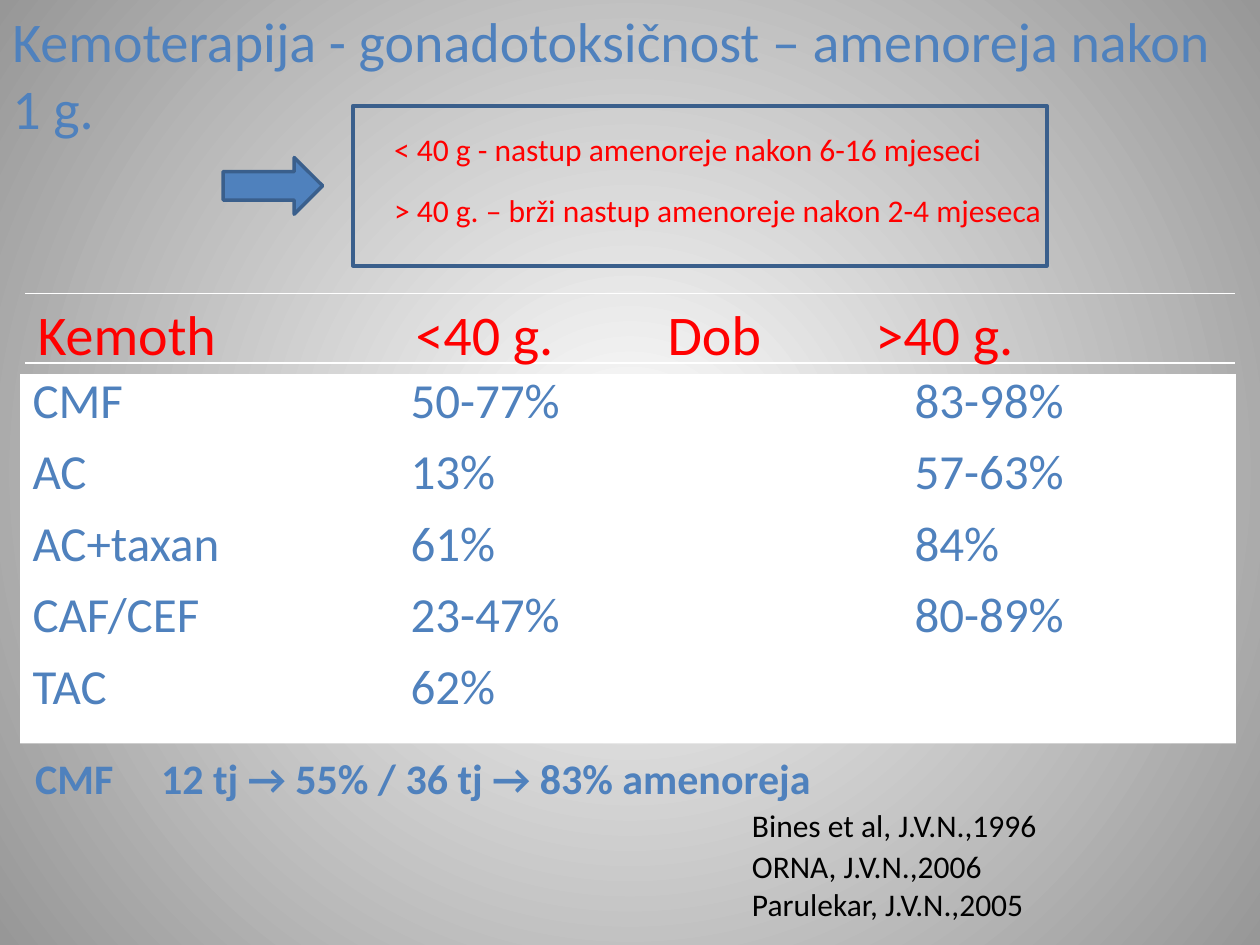
"""Build the slide on amenorrhoea one year after chemotherapy."""
import pptx
import pptx.dml.color
import pptx.enum.shapes
import pptx.enum.text
import pptx.oxml
import pptx.oxml.ns
import pptx.util
from pptx.util import Inches

COLOURS = {
    "blue": "4F81BD",
    "outline": "3A5F8C",
    "red": "FF0000",
    "white": "FFFFFF",
    "grey": "979797",
    "black": "000000",
}


def colour(name):
    return pptx.dml.color.RGBColor.from_string(COLOURS[name])


def write(box, lines, size=18, ink="blue", bold=False, before=0, spacing=None,
          first_spacing=None, tabs=()):
    frame = box.text_frame
    frame.word_wrap = True
    frame.vertical_anchor = pptx.enum.text.MSO_ANCHOR.TOP
    for index, line in enumerate(lines):
        para = frame.paragraphs[0] if index == 0 else frame.add_paragraph()
        para.alignment = pptx.enum.text.PP_ALIGN.LEFT
        para.space_before = pptx.util.Pt(before if index else 0)
        line_spacing = first_spacing if index == 0 and first_spacing else spacing
        if line_spacing:
            para.line_spacing = line_spacing
        if tabs:
            properties = para._p.get_or_add_pPr()
            stops = pptx.oxml.parse_xml(f"<a:tabLst {pptx.oxml.ns.nsdecls('a')}/>")
            for stop in tabs:
                tab = stops.makeelement(pptx.oxml.ns.qn("a:tab"),
                                        {"pos": str(Inches(stop)), "algn": "l"})
                stops.append(tab)
            properties.append(stops)
        span = para.add_run()
        span.text = line
        span.font.name = "Calibri"
        span.font.size = pptx.util.Pt(size)
        span.font.bold = bold
        span.font.color.rgb = colour(ink)


deck = pptx.Presentation()
deck.slide_width, deck.slide_height = Inches(10), Inches(7.5)
page = deck.slides.add_slide(deck.slide_layouts[6])
shapes = page.shapes

background = page.background.fill
background.gradient()
for stop, name, position in zip(background.gradient_stops, ("white", "grey"), (0, 1)):
    stop.color.rgb = colour(name)
    stop.position = position
gradient = page.element.find(".//" + pptx.oxml.ns.qn("a:gradFill"))
gradient.remove(gradient.find(pptx.oxml.ns.qn("a:lin")))
gradient.append(pptx.oxml.parse_xml(
    f'<a:path {pptx.oxml.ns.nsdecls("a")} path="circle">'
    '<a:fillToRect l="50000" t="50000" r="50000" b="50000"/></a:path>'))

panel = shapes.add_shape(pptx.enum.shapes.MSO_SHAPE.RECTANGLE,
                         Inches(0.16), Inches(2.97), Inches(9.65), Inches(2.93))
panel.shadow.inherit = False
panel.fill.solid()
panel.fill.fore_color.rgb = colour("white")
panel.line.fill.background()
therapies = [
    ("CMF", "50-77%", "83-98%"),
    ("AC", "13%", "57-63%"),
    ("AC+taxan", "61%", "84%"),
    ("CAF/CEF", "23-47%", "80-89%"),
    ("TAC", "62%"),
]
write(panel, ["\t".join(row) for row in therapies], size=28, before=14,
      spacing=0.8, tabs=(3, 7))

for height in (2.33, 2.88, 5.88):
    rule = shapes.add_connector(pptx.enum.shapes.MSO_CONNECTOR.STRAIGHT,
                                Inches(0.2), Inches(height), Inches(9.8), Inches(height))
    rule.line.color.rgb = colour("white")
    rule.line.width = pptx.util.Pt(0.75)
    rule._element.spPr.append(
        pptx.oxml.parse_xml(f"<a:effectLst {pptx.oxml.ns.nsdecls('a')}/>"))

texts = [
    ((0, 0, 10, 1.18), ["Kemoterapija - gonadotoksičnost – amenoreja nakon 1 g."],
     {"size": 32}),
    ((0.2, 2.33, 9.57, 0.64), ["Kemoth\t<40 g.\tDob\t>40 g."],
     {"size": 32, "ink": "red", "tabs": (3, 5, 6.65)}),
    ((0.18, 5.92, 10.28, 0.5), ["CMF\t12 tj → 55% / 36 tj → 83% amenoreja"],
     {"size": 24, "bold": True, "tabs": (1,)}),
    ((5.87, 6.35, 4.13, 1.09),
     ["Bines et al, J.V.N.,1996", "ORNA, J.V.N.,2006", "Parulekar, J.V.N.,2005"],
     {"ink": "black", "before": 9, "spacing": 0.6, "first_spacing": 1.0}),
    ((3.03, 0.98, 5.28, 0.4), ["< 40 g - nastup amenoreje nakon 6-16 mjeseci"],
     {"ink": "red"}),
    ((3.03, 1.47, 5.35, 0.71), ["> 40 g. – brži nastup amenoreje nakon 2-4 mjeseca"],
     {"ink": "red"}),
]
for place, lines, style in texts:
    write(shapes.add_textbox(*map(Inches, place)), lines, **style)

outlined = [
    (pptx.enum.shapes.MSO_SHAPE.RECTANGLE, (2.8, 0.84, 5.51, 1.27), None),
    (pptx.enum.shapes.MSO_SHAPE.RIGHT_ARROW, (1.77, 1.25, 0.79, 0.45), "blue"),
]
for kind, place, fill in outlined:
    shape = shapes.add_shape(kind, *map(Inches, place))
    shape.shadow.inherit = False
    shape.line.color.rgb = colour("outline")
    shape.line.width = pptx.util.Pt(2)
    if fill:
        shape.fill.solid()
        shape.fill.fore_color.rgb = colour(fill)
    else:
        shape.fill.background()

deck.save("out.pptx")
